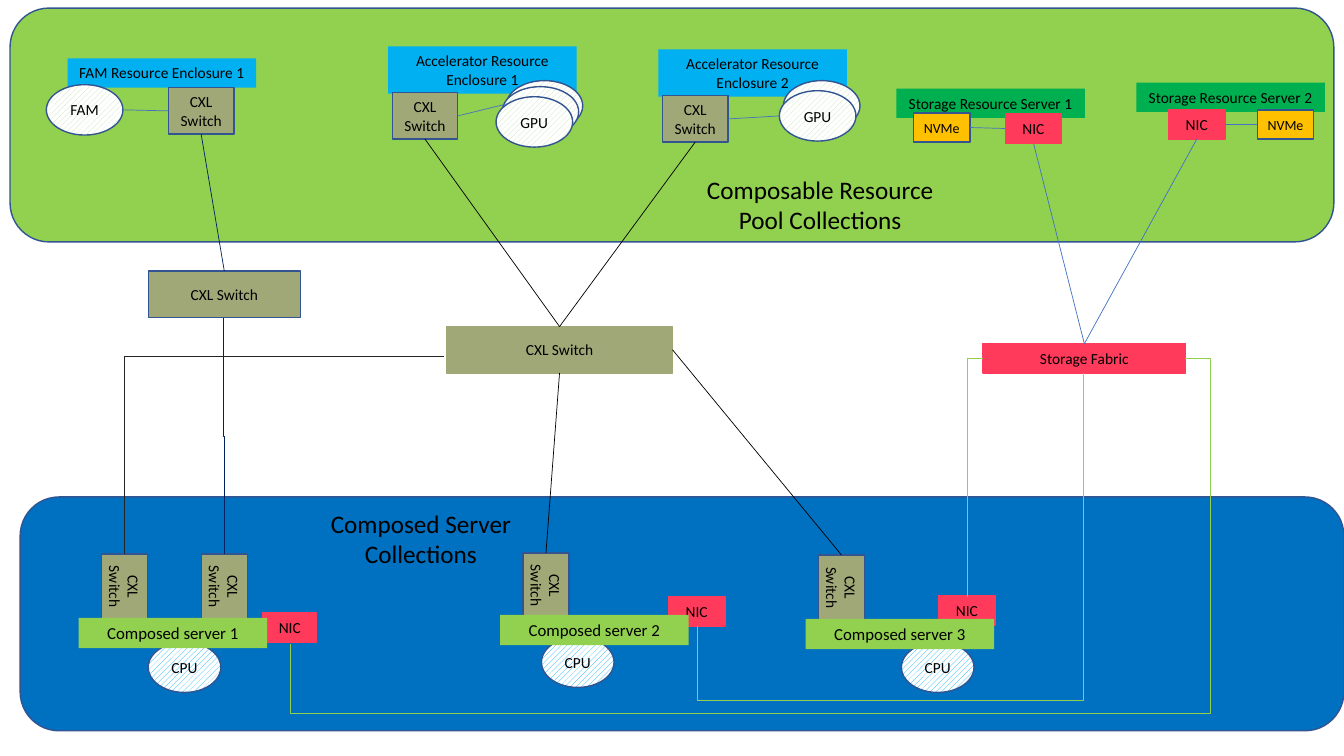
from lxml import etree
from pptx import Presentation
from pptx.dml.color import RGBColor
from pptx.enum.dml import MSO_PATTERN
from pptx.enum.shapes import MSO_CONNECTOR, MSO_SHAPE
from pptx.enum.text import MSO_ANCHOR, PP_ALIGN
from pptx.oxml.ns import qn
from pptx.util import Inches, Pt

RECTANGLE = MSO_SHAPE.RECTANGLE
ROUNDED = MSO_SHAPE.ROUNDED_RECTANGLE
OVAL = MSO_SHAPE.OVAL
STRAIGHT = MSO_CONNECTOR.STRAIGHT
ELBOW = MSO_CONNECTOR.ELBOW
DIAGONAL = MSO_PATTERN.WIDE_UPWARD_DIAGONAL
CENTER = PP_ALIGN.CENTER
MIDDLE = MSO_ANCHOR.MIDDLE
TOP_ANCHOR = MSO_ANCHOR.TOP
TOP, LEFT, BOTTOM, RIGHT = range(4)

OUTLINE = "325491"
GREEN = "92D050"
BLUE = "0070C0"
SKY = "00B0F0"
EMERALD = "00B050"
OLIVE = "A1A878"
RED = "FF3A5B"
AMBER = "FFC000"
PALE_GREEN = "C5E0B4"
WHITE = "FFFFFF"
BLACK = "000000"
CHARCOAL = "242424"
NAVY = "002060"
LINK = "4472C4"


def rgb(value):
    return RGBColor.from_string(value)


class Diagram:
    font = "Calibri"

    def __init__(self, slide):
        self.slide = slide

    def label(self, shape, text, size, anchor):
        frame = shape.text_frame
        frame.text = text
        frame.vertical_anchor = anchor
        for paragraph in frame.paragraphs:
            paragraph.alignment = CENTER
            for run in paragraph.runs:
                run.font.name = self.font
                run.font.size = Pt(size)
                run.font.color.rgb = rgb(BLACK)

    def block(self, kind, left, top, width, height, fill, line=None, text="",
              size=11, anchor=MIDDLE):
        shape = self.slide.shapes.add_shape(
            kind, Inches(left), Inches(top), Inches(width), Inches(height))
        shape.shadow.inherit = False
        shape.fill.solid()
        shape.fill.fore_color.rgb = rgb(fill)
        if line:
            shape.line.color.rgb = rgb(line)
            shape.line.width = Pt(1)
        else:
            shape.line.fill.background()
        if text:
            self.label(shape, text, size, anchor)
        return shape

    def panel(self, left, top, fill):
        self.block(ROUNDED, left, top, 13.13, 2.32, fill, OUTLINE)

    def banner(self, left, top, height, fill, text, size=11):
        self.block(RECTANGLE, left, top, 1.87, height, fill, None, text, size, TOP_ANCHOR)

    def switch(self, left, top, width=0.65, line=OUTLINE, rotation=0):
        shape = self.block(RECTANGLE, left, top, width, 0.46, OLIVE, line, "CXL Switch")
        shape.rotation = rotation
        return shape

    def nic(self, left, top, width=0.56, text="NIC"):
        return self.block(RECTANGLE, left, top, width, 0.29, RED, RED, text)

    def drive(self, left, top):
        return self.block(RECTANGLE, left, top, 0.56, 0.29, AMBER, OUTLINE, "NVMe", 10)

    def hatched(self, left, top, width, text, hatch):
        shape = self.block(OVAL, left, top, width, 0.5, WHITE, OUTLINE, text)
        shape.fill.patterned()
        shape.fill.pattern = DIAGONAL
        shape.fill.fore_color.rgb = rgb(hatch)
        shape.fill.back_color.rgb = rgb(WHITE)

    def title(self, left, top, width, text):
        box = self.slide.shapes.add_textbox(
            Inches(left), Inches(top), Inches(width), Inches(0.71))
        box.text_frame.word_wrap = False
        self.label(box, text, 18, TOP_ANCHOR)

    def connector(self, kind, start, end, color):
        points = [Inches(value) for value in (*start, *end)]
        connector = self.slide.shapes.add_connector(kind, *points)
        connector.line.color.rgb = rgb(color)
        connector.line.width = Pt(0.5)
        etree.SubElement(connector.element.spPr, qn("a:effectLst"))
        return connector

    def join(self, first, first_side, second, second_side, color):
        connector = self.connector(STRAIGHT, (0, 0), (1, 1), color)
        connector.begin_connect(first, first_side)
        connector.end_connect(second, second_side)

    def join_from(self, point, shape, side, color):
        connector = self.connector(STRAIGHT, point, (1, 1), color)
        connector.end_connect(shape, side)
        return connector

    def join_upright(self, upright, shape, side, color):
        x = upright.left + upright.width // 2
        y = upright.top + (upright.height - upright.width) // 2
        connector = self.join_from((0, 0), shape, side, color)
        connector.begin_connect(upright, LEFT)
        connector.begin_x, connector.begin_y = x, y

    def elbow(self, preset, frame, rotation, mirrored, color, adjustments=()):
        left, top, width, height = frame
        near, far = left, left + width
        if mirrored:
            near, far = far, near
        connector = self.connector(ELBOW, (near, top + height), (far, top), color)
        properties = connector.element.spPr
        properties.find(qn("a:xfrm")).set("rot", str(rotation * 60000))
        geometry = properties.find(qn("a:prstGeom"))
        geometry.set("prst", preset)
        guides = geometry.find(qn("a:avLst"))
        if guides is None:
            guides = etree.SubElement(geometry, qn("a:avLst"))
        for number, value in enumerate(adjustments, 1):
            guide = etree.SubElement(guides, qn("a:gd"))
            guide.set("name", f"adj{number}")
            guide.set("fmla", f"val {round(value * 100000)}")


def draw_resource_pool(diagram):
    diagram.banner(0.67, 0.58, 0.29, SKY, "FAM Resource Enclosure 1")
    diagram.banner(3.85, 0.46, 0.47, SKY, "Accelerator Resource Enclosure 1")
    diagram.banner(6.53, 0.49, 0.47, SKY, "Accelerator Resource Enclosure 2")
    diagram.banner(8.89, 0.88, 0.29, EMERALD, "Storage Resource Server 1")
    diagram.banner(11.27, 0.82, 0.29, EMERALD, "Storage Resource Server 2")
    diagram.hatched(0.46, 0.84, 0.76, "FAM", PALE_GREEN)
    for left, top in ((5.02, 0.8), (4.98, 0.86), (4.92, 0.96), (7.77, 0.8), (7.73, 0.9)):
        diagram.hatched(left, top, 0.76, "GPU", PALE_GREEN)
    switches = [diagram.switch(*corner) for corner in ((1.67, 0.87), (3.89, 0.92), (6.57, 0.95))]
    for switch, point in zip(switches, ((1.22, 1.09), (5.03, 1.03), (7.73, 1.15))):
        diagram.join_from(point, switch, LEFT if switch is switches[0] else RIGHT, LINK)
    drives = [diagram.drive(9.06, 1.12), diagram.drive(12.47, 1.09)]
    nics = [diagram.nic(9.97, 1.13), diagram.nic(11.59, 1.09)]
    diagram.join(drives[0], RIGHT, nics[0], LEFT, LINK)
    diagram.join(drives[1], LEFT, nics[1], RIGHT, LINK)
    return switches, nics


def draw_servers(diagram):
    for left, top in ((1.47, 6.37), (5.37, 6.32), (8.94, 6.37)):
        diagram.hatched(left, top, 0.72, "CPU", SKY)
    for left, top, width in ((2.61, 6.08, 0.53), (6.63, 5.92, 0.56), (9.31, 5.91, 0.56)):
        diagram.nic(left, top, width)
    corners = ((0.91, 5.59), (1.9, 5.59), (5.09, 5.58), (8.02, 5.6))
    uprights = [diagram.switch(*corner, rotation=90) for corner in corners]
    for number, (left, top) in enumerate(((0.78, 6.13), (4.96, 6.1), (7.99, 6.14)), 1):
        diagram.banner(left, top, 0.3, GREEN, f"Composed server {number}", 12)
    return uprights


def main():
    presentation = Presentation()
    presentation.slide_width = Inches(13.33)
    presentation.slide_height = Inches(7.5)
    diagram = Diagram(presentation.slides.add_slide(presentation.slide_layouts[6]))

    diagram.panel(0.2, 4.93, BLUE)
    diagram.panel(0.1, 0.08, GREEN)
    pool_switches, pool_nics = draw_resource_pool(diagram)
    uprights = draw_servers(diagram)

    memory_switch = diagram.switch(1.47, 2.69, 1.51)
    central_switch = diagram.switch(4.43, 3.24, 2.24, OLIVE)
    storage_fabric = diagram.nic(9.75, 3.41, 2.01, "Storage Fabric")

    diagram.join(pool_switches[0], BOTTOM, memory_switch, TOP, NAVY)
    for switch in pool_switches[1:]:
        diagram.join(switch, BOTTOM, central_switch, TOP, BLACK)
    for nic in pool_nics:
        diagram.join(nic, BOTTOM, storage_fabric, TOP, LINK)
    diagram.join_upright(uprights[2], central_switch, BOTTOM, BLACK)
    diagram.join_upright(uprights[3], central_switch, RIGHT, BLACK)

    diagram.elbow("bentConnector3", (1.05, 4.32, 2.34, 0.01), 270, False, NAVY, (0.5,))
    diagram.elbow("bentConnector4", (5.9, 0.53, 2.83, 8.88), 90, True, GREEN, (-0.246, 1.028))
    diagram.elbow("bentConnector3", (7.58, 3.04, 2.51, 3.83), 90, True, GREEN, (-0.296,))
    diagram.elbow("bentConnector2", (8.49, 4.66, 2.36, 0.16), 90, True, GREEN)
    diagram.elbow("bentConnector2", (1.84, 2.93, 1.96, 3.17), 90, True, CHARCOAL)

    diagram.title(6.9, 1.68, 2.47, "Composable Resource\nPool Collections")
    diagram.title(3.17, 4.99, 2.01, "Composed Server\nCollections")
    presentation.save("out.pptx")


if __name__ == "__main__":
    main()
